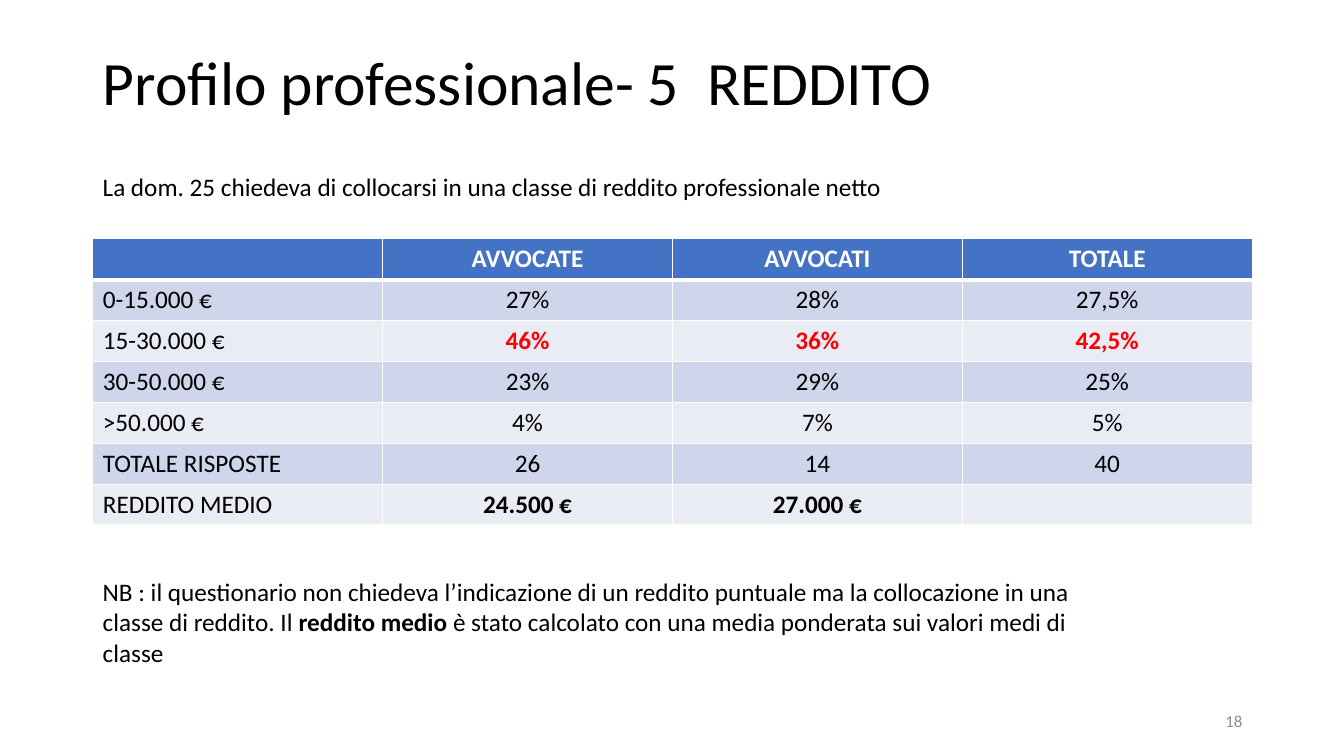
"""Build the income slide with its table and notes."""
from lxml.etree import SubElement as Sub
from pptx import Presentation
from pptx.dml.color import RGBColor as Rgb
from pptx.enum.text import MSO_ANCHOR as Anchor, PP_ALIGN as Align
from pptx.oxml.ns import qn
from pptx.util import Inches, Pt

HUES = {"black": "000000", "white": "FFFFFF", "gray": "8C8C8C", "red": "FF0000",
        "head": "4472C4", "odd": "CFD5EA", "even": "E9EBF5"}


def add_run(para, text, size=18, hue="black", bold=False):
    run = para.add_run()
    run.text = text
    font = run.font
    font.name, font.size, font.bold = "Calibri", Pt(size), bold
    font.color.rgb = Rgb.from_string(HUES[hue])


def add_edge(cell, side, width):
    line = Sub(cell._tc.get_or_add_tcPr(), qn(f"a:ln{side}"), w=str(Pt(width)))
    fill = Sub(line, qn("a:solidFill"))
    Sub(fill, qn("a:srgbClr"), val=HUES["white"])


deck = Presentation()
deck.slide_width, deck.slide_height = Inches(13.33), Inches(7.5)
slide = deck.slides.add_slide(deck.slide_layouts[5])

title = slide.shapes.title
title.left, title.top = Inches(0.92), Inches(0.12)
title.width, title.height = Inches(11.5), Inches(1.45)
title.text_frame.vertical_anchor = Anchor.MIDDLE
para = title.text_frame.paragraphs[0]
para.alignment = Align.LEFT
para.line_spacing = 0.9
add_run(para, "Profilo professionale- 5  REDDITO", 44)

rows = [
    ["", "AVVOCATE", "AVVOCATI", "TOTALE"],
    ["0-15.000 €", "27%", "28%", "27,5%"],
    ["15-30.000 €", "46%", "36%", "42,5%"],
    ["30-50.000 €", "23%", "29%", "25%"],
    [">50.000 €", "4%", "7%", "5%"],
    ["TOTALE RISPOSTE", "26", "14", "40"],
    ["REDDITO MEDIO", "24.500 €", "27.000 €", ""],
]
frame = slide.shapes.add_table(len(rows), 4, Inches(0.92), Inches(2.37),
                               Inches(11.5), Inches(2.84))
table = frame.table
for r, row in enumerate(rows):
    for c, text in enumerate(row):
        cell = table.cell(r, c)
        for side in "LRTB":
            thick = (r, side) in [(0, "B"), (1, "T")]
            add_edge(cell, side, 3 if thick else 1)
        cell.fill.solid()
        band = "head" if r == 0 else "odd" if r % 2 else "even"
        cell.fill.fore_color.rgb = Rgb.from_string(HUES[band])
        para = cell.text_frame.paragraphs[0]
        para.alignment = Align.CENTER if c else Align.LEFT
        hue = "white" if r == 0 else "red" if r == 2 and c else "black"
        if text:
            add_run(para, text, hue=hue, bold=r == 0 or (r in (2, 6) and c > 0))

notes = [
    (0.92, 1.65, 10.08, 0.4, Align.LEFT, Anchor.TOP, 18, "black", [
        ("La dom. 25 chiedeva di collocarsi in una classe di reddito professionale netto", False)]),
    (0.92, 5.67, 10.08, 1.01, Align.LEFT, Anchor.TOP, 18, "black", [
        ("NB : il questionario non chiedeva l’indicazione di un reddito puntuale "
         "ma la collocazione in una classe di reddito. Il ", False),
        ("reddito medio ", True),
        ("è stato calcolato con una media ponderata sui valori medi di classe", False)]),
    (9.42, 6.95, 3, 0.4, Align.RIGHT, Anchor.MIDDLE, 12, "gray", [("18", False)]),
]
for left, top, width, height, align, anchor, size, hue, runs in notes:
    box = slide.shapes.add_textbox(Inches(left), Inches(top), Inches(width), Inches(height))
    box.text_frame.word_wrap = True
    box.text_frame.vertical_anchor = anchor
    para = box.text_frame.paragraphs[0]
    para.alignment = align
    for text, bold in runs:
        add_run(para, text, size, hue, bold)

deck.save("out.pptx")
